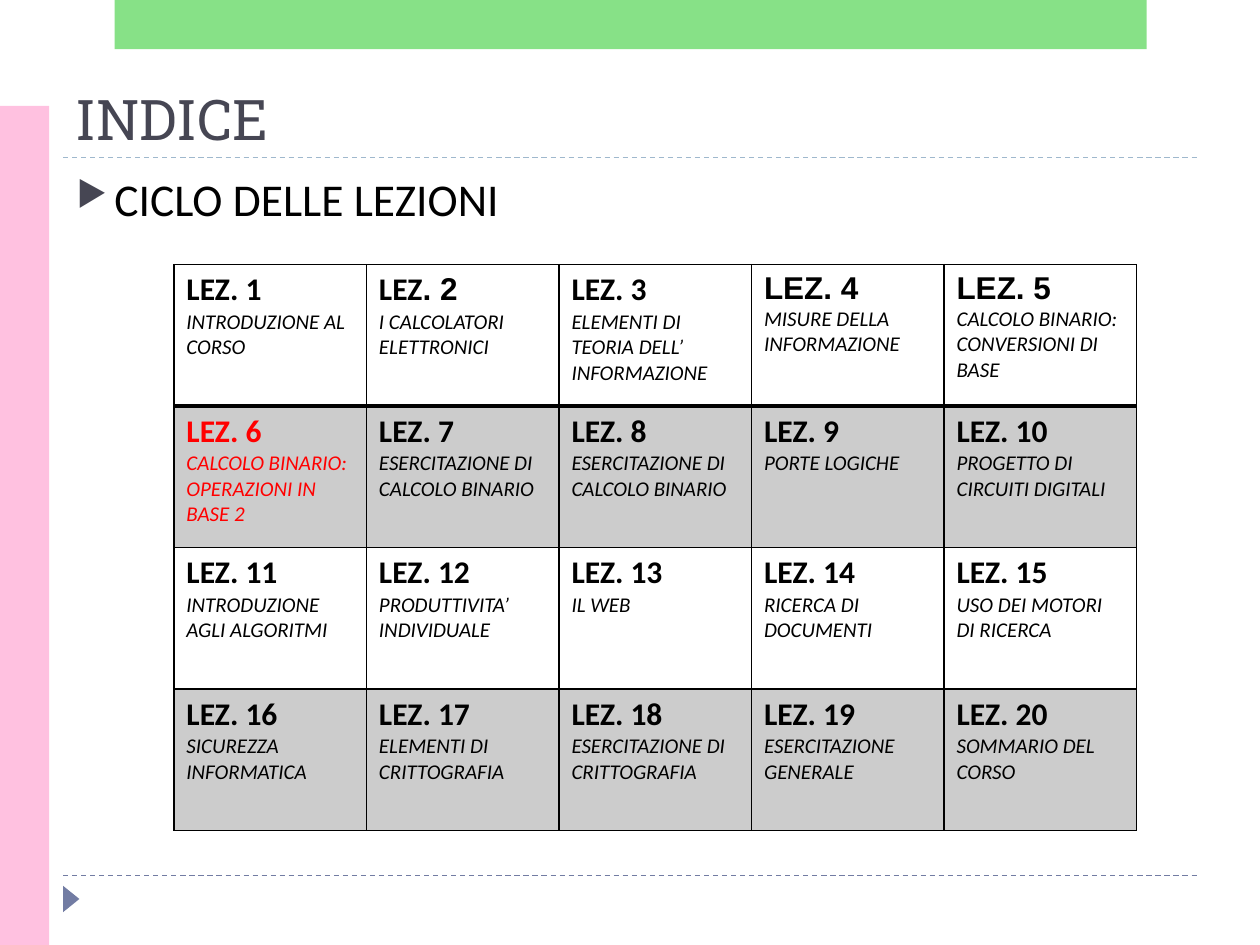
from lxml import etree
from pptx import Presentation
from pptx.dml.color import RGBColor
from pptx.enum.dml import MSO_LINE
from pptx.enum.shapes import MSO_CONNECTOR, MSO_SHAPE
from pptx.enum.text import MSO_ANCHOR
from pptx.oxml import parse_xml
from pptx.oxml.ns import nsdecls, qn
from pptx.util import Inches, Pt

RECTANGLE = MSO_SHAPE.RECTANGLE
TRIANGLE = MSO_SHAPE.ISOSCELES_TRIANGLE
STRAIGHT = MSO_CONNECTOR.STRAIGHT
DASH = MSO_LINE.DASH
BOTTOM, TOP = MSO_ANCHOR.BOTTOM, MSO_ANCHOR.TOP

BLACK = RGBColor(0x00, 0x00, 0x00)
RED = RGBColor(0xFF, 0x00, 0x00)
SLATE = RGBColor(0x46, 0x46, 0x53)
INDIGO = RGBColor(0x72, 0x7C, 0xA3)
PALE_BLUE = RGBColor(0x9F, 0xB8, 0xCD)
PINK = RGBColor(0xFF, 0xC1, 0xE0)
GREEN = RGBColor(0x62, 0xD8, 0x62)
WHITE = RGBColor(0xFF, 0xFF, 0xFF)

TITLE_FONT, BODY_FONT, ALTERNATE_FONT = "Roboto Slab", "Calibri", "Arial"

COLUMNS = 5
CURRENT_LESSON = 6
TOPICS = [
    "INTRODUZIONE AL CORSO",
    "I CALCOLATORI \nELETTRONICI",
    "ELEMENTI DI TEORIA DELL’\nINFORMAZIONE",
    "MISURE DELLA INFORMAZIONE",
    "CALCOLO BINARIO: CONVERSIONI DI BASE",
    "CALCOLO BINARIO: OPERAZIONI IN BASE 2",
    "ESERCITAZIONE DI CALCOLO BINARIO",
    "ESERCITAZIONE DI CALCOLO BINARIO",
    "PORTE LOGICHE",
    "PROGETTO DI CIRCUITI DIGITALI",
    "INTRODUZIONE AGLI ALGORITMI",
    "PRODUTTIVITA’ INDIVIDUALE",
    "IL WEB",
    "RICERCA DI DOCUMENTI",
    "USO DEI MOTORI DI RICERCA",
    "SICUREZZA INFORMATICA",
    "ELEMENTI DI CRITTOGRAFIA",
    "ESERCITAZIONE DI CRITTOGRAFIA",
    "ESERCITAZIONE GENERALE",
    "SOMMARIO DEL CORSO",
]
# Fonts of the word "LEZ" and of the number, where they differ from the body
HEADING_FONTS = {
    2: (BODY_FONT, ALTERNATE_FONT),
    4: (ALTERNATE_FONT, ALTERNATE_FONT),
    5: (ALTERNATE_FONT, ALTERNATE_FONT),
}


def set_fill(fill, color, opacity=100):
    fill.solid()
    fill.fore_color.rgb = color
    if opacity < 100:
        color_element = fill._xPr.find(qn("a:solidFill"))[0]
        etree.SubElement(color_element, qn("a:alpha"), val=str(opacity * 1000))


def add_block(slide, kind, box, color, opacity=100, rotation=0):
    shape = slide.shapes.add_shape(kind, *map(Inches, box))
    shape.shadow.inherit = False
    shape.rotation = rotation
    set_fill(shape.fill, color, opacity)
    shape.line.fill.background()


def add_rule(slide, left, top, width, color):
    rule = slide.shapes.add_connector(
        STRAIGHT, Inches(left), Inches(top), Inches(left + width), Inches(top))
    rule.line.color.rgb = color
    rule.line.width = Pt(0.75)
    rule.line.dash_style = DASH
    etree.SubElement(rule._element.spPr, qn("a:effectLst"))


def add_run(paragraph, text, font, size, color, bold=False, italic=False):
    run = paragraph.add_run()
    run.text = text
    run.font.name = font
    run.font.size = Pt(size)
    run.font.color.rgb = color
    run.font.bold = bold
    run.font.italic = italic


def add_text_box(slide, box, anchor):
    """Add a wrapping text box and return its first paragraph."""
    frame = slide.shapes.add_textbox(*map(Inches, box)).text_frame
    frame.word_wrap = True
    frame.vertical_anchor = anchor
    return frame.paragraphs[0]


def add_title(slide, box):
    add_run(add_text_box(slide, box, BOTTOM), "INDICE", TITLE_FONT, 32, SLATE)


def add_subtitle(slide, box):
    paragraph = add_text_box(slide, box, TOP)
    properties = paragraph._p.get_or_add_pPr()
    properties.set("marL", str(Inches(0.3)))
    properties.set("indent", str(Inches(-0.3)))
    color = etree.SubElement(properties, qn("a:buClr"))
    etree.SubElement(color, qn("a:srgbClr"), val=str(SLATE))
    etree.SubElement(properties, qn("a:buSzPct"), val="76000")
    etree.SubElement(properties, qn("a:buChar"), char="▶")
    add_run(paragraph, "CICLO DELLE LEZIONI", BODY_FONT, 26, BLACK)


def set_borders(cell, top, bottom):
    """Draw black borders; they must come before the fill in the cell."""
    properties = cell._tc.get_or_add_tcPr()
    widths = {"lnL": 1, "lnR": 1, "lnT": top, "lnB": bottom}
    for position, (side, width) in enumerate(widths.items()):
        properties.insert(position, parse_xml(
            f'<a:{side} {nsdecls("a")} w="{Pt(width)}"><a:solidFill>'
            f'<a:srgbClr val="{BLACK}"/></a:solidFill></a:{side}>'))


def fill_lesson(cell, number, topic):
    color = RED if number == CURRENT_LESSON else BLACK
    word_font, number_font = HEADING_FONTS.get(number, (BODY_FONT, BODY_FONT))
    heading = cell.text_frame.paragraphs[0]
    if word_font == number_font:
        add_run(heading, f"LEZ. {number}", word_font, 18, color, bold=True)
    else:
        add_run(heading, "LEZ", word_font, 18, color, bold=True)
        add_run(heading, f". {number}", number_font, 18, color, bold=True)
    paragraph = cell.text_frame.add_paragraph()
    for index, line in enumerate(topic.split("\n")):
        if index:
            paragraph.add_line_break()
        add_run(paragraph, line, BODY_FONT, 12, color, italic=True)


def add_lesson_table(slide, box):
    row_count = len(TOPICS) // COLUMNS
    table = slide.shapes.add_table(
        row_count, COLUMNS, *map(Inches, box)).table
    table.first_row = False
    table.horz_banding = False
    for column in table.columns:
        column.width = Inches(box[2] / COLUMNS)
    for row in table.rows:
        row.height = Inches(box[3] / row_count)
    for index, topic in enumerate(TOPICS):
        row, column = divmod(index, COLUMNS)
        cell = table.cell(row, column)
        if row % 2:
            set_fill(cell.fill, BLACK, 20)
        else:
            set_fill(cell.fill, WHITE)
        set_borders(cell, 2 if row == 1 else 1, 2 if row == 0 else 1)
        fill_lesson(cell, index + 1, topic)


def add_decoration(slide):
    add_rule(slide, 0.5, 6.95, 9, INDIGO)
    add_rule(slide, 0.5, 1.25, 9, PALE_BLUE)
    add_block(slide, TRIANGLE, (0.46, 7.07, 0.21, 0.13), INDIGO, rotation=90)
    add_block(slide, RECTANGLE, (0, 0.84, 0.39, 6.66), PINK)
    add_block(slide, RECTANGLE, (0.91, 0, 8.19, 0.39), GREEN, opacity=76)


def main():
    presentation = Presentation()
    presentation.slide_width = Inches(10)
    presentation.slide_height = Inches(7.5)
    slide = presentation.slides.add_slide(presentation.slide_layouts[6])
    add_decoration(slide)
    add_title(slide, (0.5, 0.55, 9, 0.7))
    add_subtitle(slide, (0.51, 1.31, 9, 0.79))
    add_lesson_table(slide, (1.38, 2.1, 7.64, 4.49))
    presentation.save("out.pptx")


if __name__ == "__main__":
    main()
